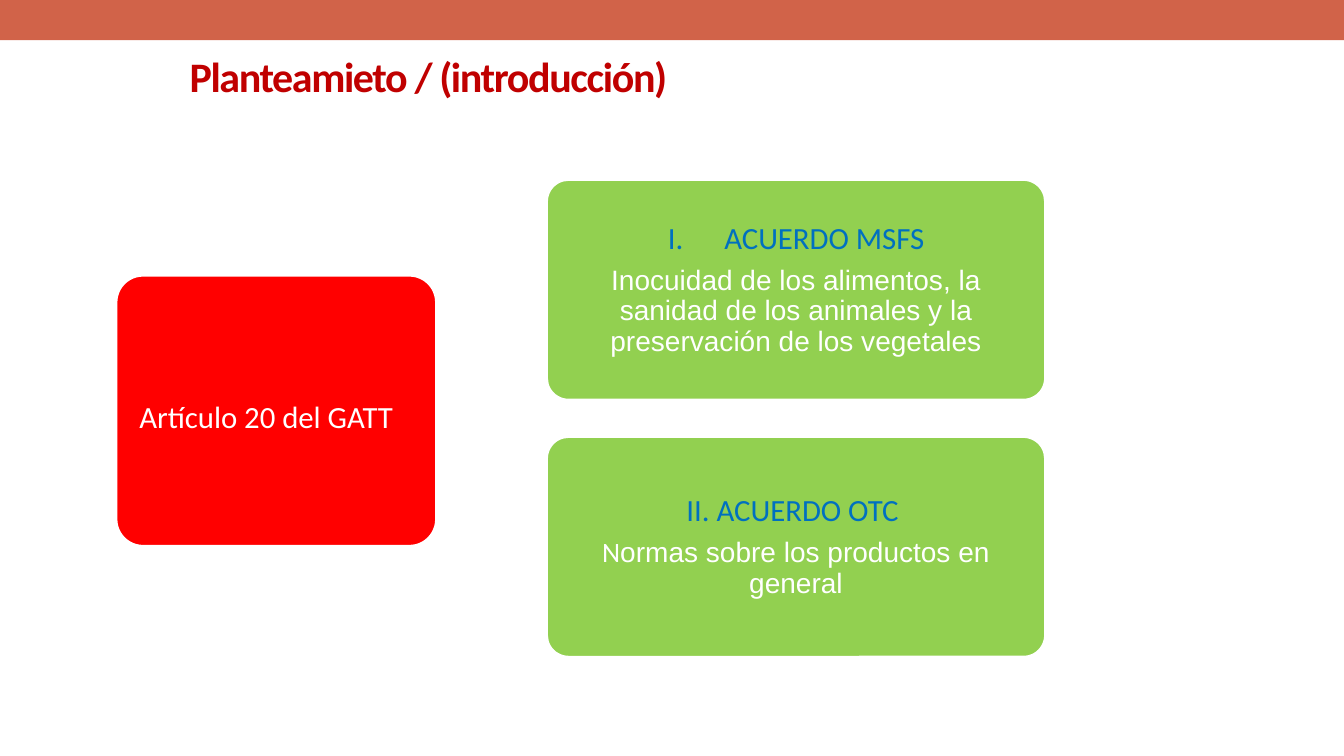
from dataclasses import dataclass

from lxml.etree import SubElement
from pptx import Presentation
from pptx.dml.color import RGBColor as Color
from pptx.enum.shapes import MSO_SHAPE as Shape
from pptx.enum.text import MSO_ANCHOR as Anchor, PP_ALIGN as Align
from pptx.oxml.ns import qn
from pptx.util import Inches, Pt

WHITE = Color(0xFF, 0xFF, 0xFF)
RUST = Color(0xD1, 0x63, 0x49)
CRIMSON = Color(0xC0, 0x00, 0x00)
RED = Color(0xFF, 0x00, 0x00)
GREEN = Color(0x92, 0xD0, 0x50)
BLUE = Color(0x00, 0x70, 0xC0)

Area = tuple[float, float, float, float]


@dataclass
class Line:
    runs: list[tuple[str, str]]
    size: int
    color: Color
    roman: bool = False


@dataclass
class Card:
    area: Area
    label: Area
    fill: Color
    lines: list[Line]


def place(area: Area) -> list[int]:
    return [Inches(length) for length in area]


def add_run(para, text: str, *, font: str, size: int, color: Color,
            bold: bool = False, spacing: int = 0) -> None:
    run = para.add_run()
    run.text = text
    run.font.name = font
    run.font.size = Pt(size)
    run.font.bold = bold
    run.font.color.rgb = color
    if spacing:
        run.font._element.set("spc", str(spacing))


def add_block(slide, kind: Shape, area: Area, fill: Color):
    block = slide.shapes.add_shape(kind, *place(area))
    block.shadow.inherit = False
    block.fill.solid()
    block.fill.fore_color.rgb = fill
    block.line.fill.background()
    return block


def add_roman(para) -> None:
    props = para._p.get_or_add_pPr()
    props.set("marL", str(Inches(0.56)))
    props.set("indent", str(Inches(-0.56)))
    SubElement(props, qn("a:buFont"), typeface="+mj-lt")
    SubElement(props, qn("a:buAutoNum"), type="romanUcPeriod")


def add_card(slide, card: Card) -> None:
    block = add_block(slide, Shape.ROUNDED_RECTANGLE, card.area, card.fill)
    block.adjustments[0] = 0.1
    block.line.color.rgb = WHITE
    block.line.width = Pt(2.08)

    frame = slide.shapes.add_textbox(*place(card.label)).text_frame
    frame.word_wrap = True
    frame.vertical_anchor = Anchor.MIDDLE
    frame.margin_left = frame.margin_right = Inches(0.09)
    frame.margin_top = frame.margin_bottom = Inches(0.09)
    for index, line in enumerate(card.lines):
        para = frame.add_paragraph() if index else frame.paragraphs[0]
        if line.roman:
            add_roman(para)
        para.alignment = Align.CENTER
        para.line_spacing = 0.9
        para.space_after = Pt(0.35 * line.size)
        for text, font in line.runs:
            add_run(para, text, font=font, size=line.size, color=line.color)


def add_title(slide, text: str) -> None:
    title = slide.shapes.title
    title.left, title.top, title.width, title.height = place((1.78, 0.44, 6.37, 0.63))
    frame = title.text_frame
    frame.word_wrap = True
    frame.vertical_anchor = Anchor.MIDDLE
    para = frame.paragraphs[0]
    para.alignment = Align.LEFT
    add_run(para, text, font="Calibri", size=30, color=CRIMSON, bold=True, spacing=-100)


def green_card(top: float, lines: list[Line]) -> Card:
    return Card((5.42, top, 4.95, 2.19), (5.57, top + 0.06, 4.65, 2.07), GREEN, lines)


CARDS = [
    Card((1.15, 2.73, 3.18, 2.69), (1.08, 2.88, 3.12, 2.54), RED,
         [Line([("Artículo 20 del GATT", "Calibri")], 22, WHITE)]),
    green_card(1.78, [
        Line([("ACUERDO MSFS", "Calibri")], 22, BLUE, roman=True),
        Line([("Inocuidad de los alimentos, la sanidad de los animales y la "
               "preservación de los vegetales", "Arial")], 20, WHITE),
    ]),
    green_card(4.33, [
        Line([("II. ACUERDO OTC ", "Calibri")], 22, BLUE),
        Line([("N", "Calibri"), ("ormas sobre los productos en general", "Arial")],
             20, WHITE),
    ]),
]


def main() -> None:
    deck = Presentation()
    deck.slide_width = Inches(13.33)
    deck.slide_height = Inches(7.5)
    slide = deck.slides.add_slide(deck.slide_layouts[5])
    add_block(slide, Shape.RECTANGLE, (0, 0, 13.33, 0.4), RUST)
    add_title(slide, "Planteamieto / (introducción)")
    for card in CARDS:
        add_card(slide, card)
    deck.save("out.pptx")


if __name__ == "__main__":
    main()
